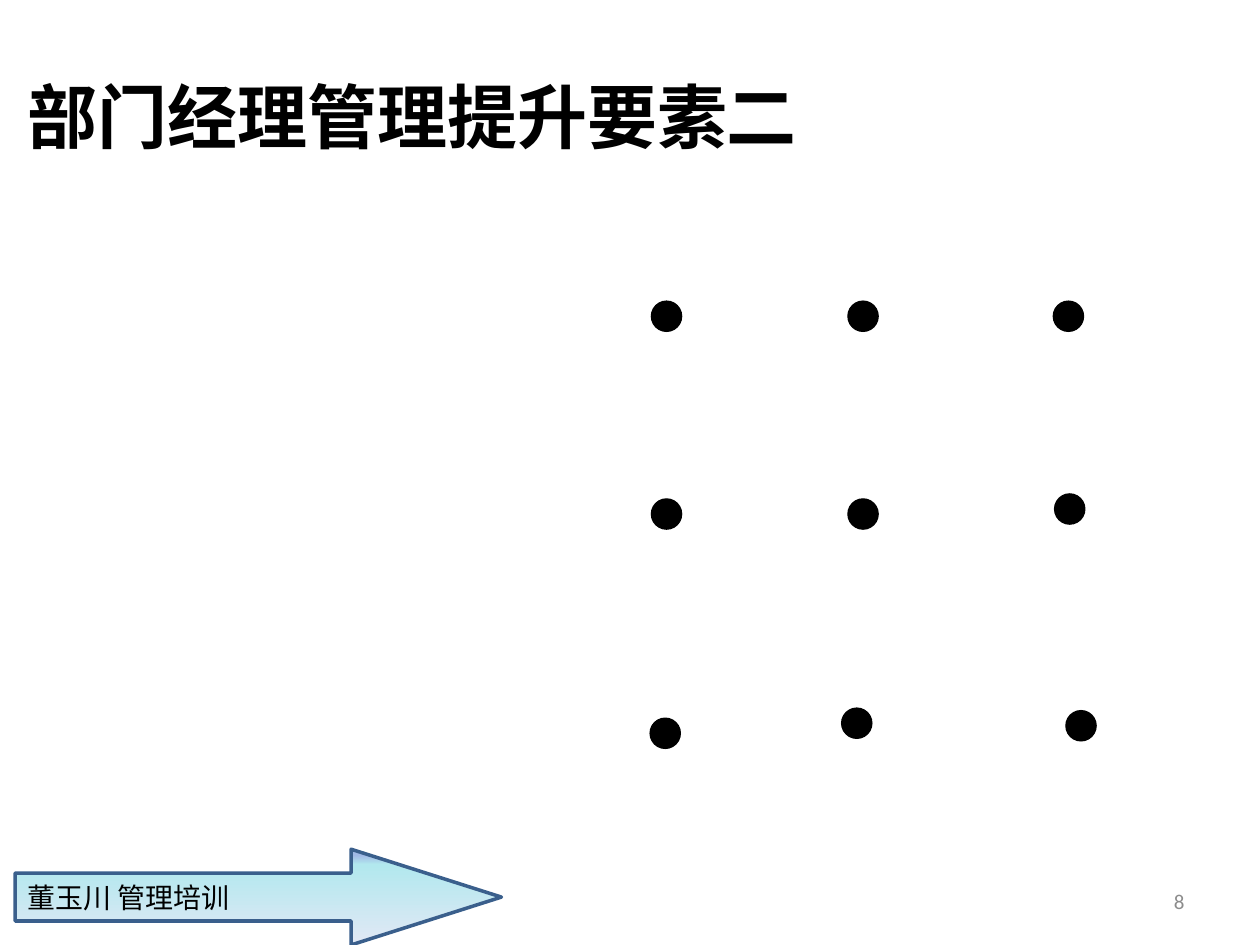
from lxml import etree
from pptx import Presentation
from pptx.dml.color import RGBColor
from pptx.enum.shapes import MSO_SHAPE as Shape
from pptx.enum.text import MSO_ANCHOR as Anchor, PP_ALIGN as Align
from pptx.oxml.ns import qn
from pptx.util import Inches, Pt

BLACK = "000000"
ARROW_STOPS = [(0, "9AB5E4"), (4, "A0B9E5"), (7, "A2BBE6"), (16, "B2E8EE"), (100, "E1E8F5")]
DOT_SIZE = 0.24
DOT_ROWS = [
    [(5.17, 2.39), (6.73, 2.39), (8.36, 2.39)],
    [(5.17, 3.96), (6.73, 3.96), (8.37, 3.92)],
    [(5.16, 5.7), (6.68, 5.62), (8.46, 5.64)],
]


def color(value):
    """Turn a hex string into a colour."""
    return RGBColor.from_string(value)


def to_inches(box):
    """Turn left, top, width and height into lengths."""
    return [Inches(value) for value in box]


def write(shape, text, size, font, ink=BLACK, bold=False, align=Align.LEFT, hanging=0):
    """Write one vertically centred paragraph into a shape."""
    frame = shape.text_frame
    frame.word_wrap = True
    frame.vertical_anchor = Anchor.MIDDLE
    para = frame.paragraphs[0]
    para.alignment = align
    para.space_before = Pt(0)
    if hanging:
        properties = para._p.get_or_add_pPr()
        properties.set("marL", str(Inches(hanging)))
        properties.set("indent", str(-Inches(hanging)))
    span = para.add_run()
    span.text = text
    span.font.size = Pt(size)
    span.font.name = font
    span.font.bold = bold
    span.font.color.rgb = color(ink)


def fill_gradient(shape, stops):
    """Fill a shape from top to bottom with the given colour stops."""
    shape.fill.gradient()
    shape.fill.gradient_angle = 270
    stop_list = shape._element.spPr.find(qn("a:gradFill")).find(qn("a:gsLst"))
    for stop in list(stop_list):
        stop_list.remove(stop)
    for percent, value in stops:
        stop = etree.SubElement(stop_list, qn("a:gs"), pos=str(percent * 1000))
        etree.SubElement(stop, qn("a:srgbClr"), val=value)


def add_banner(page, box):
    """Draw the trainer's arrow banner."""
    arrow = page.shapes.add_shape(Shape.RIGHT_ARROW, *to_inches(box))
    arrow.shadow.inherit = False
    arrow.adjustments[0] = 0.5
    arrow.adjustments[1] = 1.57
    fill_gradient(arrow, ARROW_STOPS)
    arrow.line.color.rgb = color("3A5F8C")
    arrow.line.width = Pt(2)
    write(arrow, "董玉川 管理培训", 16, "Arial", hanging=0.38)


def add_page_number(page, box):
    """Place the page number."""
    number = page.shapes.add_textbox(*to_inches(box))
    write(number, "8", 12, "Calibri", ink="8C8C8C", align=Align.RIGHT)


def add_dots(page, rows):
    """Draw the nine dots of the puzzle."""
    for row in rows:
        for left, top in row:
            dot = page.shapes.add_shape(
                Shape.FLOWCHART_CONNECTOR, *to_inches((left, top, DOT_SIZE, DOT_SIZE)))
            dot.shadow.inherit = False
            dot.fill.solid()
            dot.fill.fore_color.rgb = color(BLACK)
            dot.line.color.rgb = color(BLACK)
            dot.line.width = Pt(0.75)


def set_title(page, box):
    """Place and write the slide title."""
    title = page.shapes.title
    title.left, title.top, title.width, title.height = to_inches(box)
    write(title, "部门经理管理提升要素二", 40, "Calibri", bold=True, hanging=0.38)


def main():
    """Build and save the slide."""
    deck = Presentation()
    deck.slide_width, deck.slide_height = Inches(10), Inches(7.5)
    page = deck.slides.add_slide(deck.slide_layouts[5])
    add_banner(page, (0.12, 6.74, 3.86, 0.76))
    add_page_number(page, (8.94, 6.95, 0.56, 0.4))
    add_dots(page, DOT_ROWS)
    set_title(page, (0.12, 0.29, 7.32, 1.25))
    deck.save("out.pptx")


if __name__ == "__main__":
    main()
